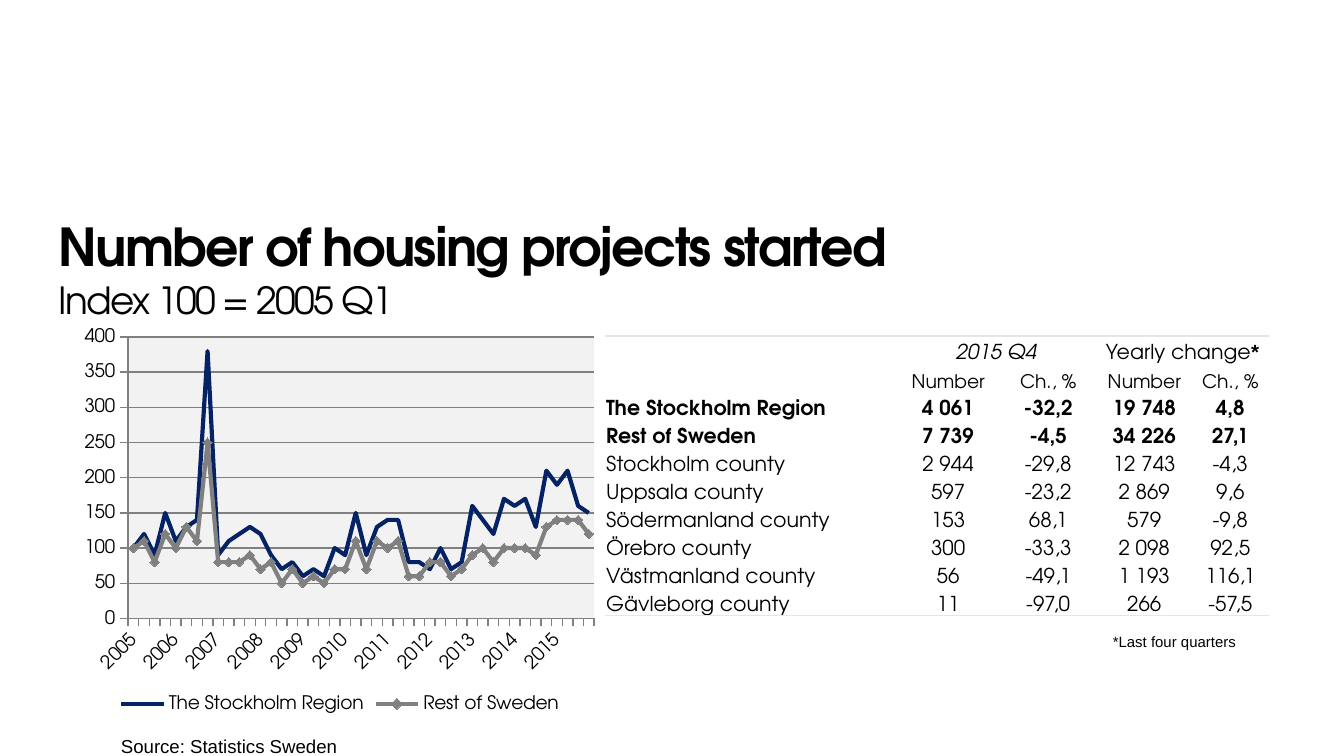
from dataclasses import dataclass

from lxml.etree import SubElement
from pptx import Presentation
from pptx.chart.data import CategoryChartData
from pptx.dml.color import RGBColor
from pptx.enum.chart import XL_CHART_TYPE as ChartType
from pptx.enum.chart import XL_LEGEND_POSITION as LegendPosition
from pptx.enum.chart import XL_MARKER_STYLE as MarkerStyle
from pptx.enum.chart import XL_TICK_MARK as TickMark
from pptx.enum.text import MSO_ANCHOR as Anchor
from pptx.enum.text import MSO_AUTO_SIZE as AutoSize
from pptx.enum.text import PP_ALIGN as Align
from pptx.oxml import parse_xml
from pptx.oxml.ns import nsdecls, qn
from pptx.util import Inches, Pt

COLORS = {"text": "000000", "rule": "E6E6E6", "plot": "F2F2F2",
          "stockholm": "052364", "rest": "808080", "grid": "808080"}
HEADING_FONT, NOTE_FONT = "TeX Gyre Adventor", "Arial"
PLAIN_TABLE_STYLE = "{2D5ABB26-0587-4C30-8999-92F81FD0307C}"
COLUMNS, ROWS = 100, 56.25
NO_MARGINS = dict.fromkeys(
    ("margin_left", "margin_top", "margin_right", "margin_bottom"), 0)


def grid(units: float) -> int:
    """Length of a number of grid units, a hundredth of the slide's width each."""
    return Inches(units * 10 / COLUMNS)


@dataclass(frozen=True)
class Box:
    left: float
    top: float
    width: float
    height: float

    def lengths(self) -> list[int]:
        return [grid(v) for v in (self.left, self.top, self.width, self.height)]


@dataclass(frozen=True)
class Note:
    text: str
    box: Box
    size: float


@dataclass(frozen=True)
class IndexLine:
    name: str
    color: str
    marker: MarkerStyle
    values: tuple[int, ...]


NOTES = (
    Note("Source: Statistics Sweden", Box(9, 53, 17, 4.2), 10),
    Note("*Last four quarters", Box(82.8, 45.1, 10, 9.2), 8),
)
QUARTERS = [str(year) if quarter == 0 else ""
            for year in range(2005, 2016) for quarter in range(4)]
INDEX_LINES = (
    IndexLine("The Stockholm Region", "stockholm", MarkerStyle.NONE, (
        100, 120, 90, 150, 110, 130, 140, 380, 90, 110, 120, 130, 120, 90, 70,
        80, 60, 70, 60, 100, 90, 150, 90, 130, 140, 140, 80, 80, 70, 100, 70,
        80, 160, 140, 120, 170, 160, 170, 130, 210, 190, 210, 160, 150)),
    IndexLine("Rest of Sweden", "rest", MarkerStyle.DIAMOND, (
        100, 110, 80, 120, 100, 130, 110, 250, 80, 80, 80, 90, 70, 80, 50, 70,
        50, 60, 50, 70, 70, 110, 70, 110, 100, 110, 60, 60, 80, 80, 60, 70, 90,
        100, 80, 100, 100, 100, 90, 130, 140, 140, 140, 120)),
)
COLUMN_WIDTHS = (21.7, 7.7, 7.2, 7.1, 5.7)
HOUSING = (
    ("", "2015 Q4", "", "Yearly change", ""),
    ("", "Number", "Ch., %", "Number", "Ch., %"),
    ("The Stockholm Region", "4 061", "-32,2", "19 748", "4,8"),
    ("Rest of Sweden", "7 739", "-4,5", "34 226", "27,1"),
    ("Stockholm county", "2 944", "-29,8", "12 743", "-4,3"),
    ("Uppsala county", "597", "-23,2", "2 869", "9,6"),
    ("Södermanland county", "153", "68,1", "579", "-9,8"),
    ("Örebro county", "300", "-33,3", "2 098", "92,5"),
    ("Västmanland county", "56", "-49,1", "1 193", "116,1"),
    ("Gävleborg county", "11", "-97,0", "266", "-57,5"),
)


def set_values(target, values: dict) -> None:
    for name, value in values.items():
        setattr(target, name, value)


def style_font(font, size: float, name: str = HEADING_FONT, **values) -> None:
    set_values(font, {"name": name, "size": Pt(size), "bold": False} | values)
    font.color.rgb = RGBColor.from_string(COLORS["text"])


def style_line(line, color: str, width: float) -> None:
    line.color.rgb = RGBColor.from_string(COLORS[color])
    line.width = Pt(width)


def write_title(title) -> None:
    set_values(title, dict(zip(("left", "top", "width", "height"),
                               Box(4.35, 15.95, 62.1, 8).lengths())))
    frame = title.text_frame
    set_values(frame, NO_MARGINS | {"vertical_anchor": Anchor.TOP,
                                    "auto_size": AutoSize.NONE, "word_wrap": True})
    paragraph = frame.paragraphs[0]
    paragraph.alignment = Align.LEFT
    for text, size, bold in (("Number of housing projects started", 28, True),
                             ("Index 100 = 2005 Q1", 20, False)):
        if paragraph.runs:
            paragraph.add_line_break()
        run = paragraph.add_run()
        run.text = text
        style_font(run.font, size, bold=bold)
        run.font._element.set("spc", "-90")


def add_note(slide, note: Note) -> None:
    frame = slide.shapes.add_textbox(*note.box.lengths()).text_frame
    set_values(frame, NO_MARGINS | {"word_wrap": False})
    paragraph = frame.paragraphs[0]
    paragraph.line_spacing = Pt(24)
    run = paragraph.add_run()
    run.text = note.text
    style_font(run.font, note.size, NOTE_FONT)


def add_rule(cell, side: str) -> None:
    """Draw a thin border; side is lnT or lnB."""
    border = parse_xml(
        f'<a:{side} {nsdecls("a")} w="12700"><a:solidFill>'
        f'<a:srgbClr val="{COLORS["rule"]}"/></a:solidFill></a:{side}>')
    cell._tc.get_or_add_tcPr().insert(0, border)


def add_housing_table(slide) -> None:
    box = Box(45, 25, sum(COLUMN_WIDTHS), 20.8)
    table = slide.shapes.add_table(
        len(HOUSING), len(COLUMN_WIDTHS), *box.lengths()).table
    set_values(table, {"first_row": False, "horz_banding": False})
    table._tbl.tblPr.find(qn("a:tableStyleId")).text = PLAIN_TABLE_STYLE
    for column, width in zip(table.columns, COLUMN_WIDTHS):
        column.width = grid(width)
    for first in (1, 3):
        table.cell(0, first).merge(table.cell(0, first + 1))
    for r, entries in enumerate(HOUSING):
        table.rows[r].height = grid(box.height / len(HOUSING))
        size = 10 if r == 1 else 11
        for c, text in enumerate(entries):
            cell = table.cell(r, c)
            set_values(cell, dict.fromkeys(NO_MARGINS, grid(0.1))
                       | {"margin_bottom": 0, "vertical_anchor": Anchor.BOTTOM})
            cell.fill.background()
            paragraph = cell.text_frame.paragraphs[0]
            paragraph.alignment = Align.CENTER if c else Align.LEFT
            if text:
                run = paragraph.add_run()
                run.text = text
                style_font(run.font, size, bold=r in (2, 3), italic=(r, c) == (0, 1))
            else:
                SubElement(paragraph._p, qn("a:endParaRPr"), sz=str(size * 100))
            if r == 0:
                add_rule(cell, "lnT")
            elif r == len(HOUSING) - 1:
                add_rule(cell, "lnB")
    asterisk = table.cell(0, 3).text_frame.paragraphs[0].add_run()
    asterisk.text = "*"
    style_font(asterisk.font, 11, NOTE_FONT, bold=True)


def format_plot_area(chart) -> None:
    """Place the inner plot area and fill its background."""
    area = chart._chartSpace.chart.plotArea
    for layout in area.findall(qn("c:layout")):
        area.remove(layout)
    shares = "".join(f'<c:{key} val="{value}"/>' for key, value in
                     {"x": 0.1, "y": 0.04, "w": 0.88, "h": 0.71}.items())
    area.insert(0, parse_xml(
        f'<c:layout {nsdecls("c")}><c:manualLayout><c:layoutTarget val="inner"/>'
        f'<c:xMode val="edge"/><c:yMode val="edge"/>{shares}'
        '</c:manualLayout></c:layout>'))
    area.append(parse_xml(
        f'<c:spPr {nsdecls("c", "a")}><a:solidFill>'
        f'<a:srgbClr val="{COLORS["plot"]}"/></a:solidFill></c:spPr>'))


def add_index_chart(slide) -> None:
    data = CategoryChartData(number_format="0")
    data.categories = QUARTERS
    for line in INDEX_LINES:
        data.add_series(line.name, line.values)
    chart = slide.shapes.add_chart(
        ChartType.LINE_MARKERS, *Box(5.6, 23.9, 39.4, 29.5).lengths(), data).chart
    set_values(chart, {"has_title": False, "has_legend": True})
    style_font(chart.font, 10)
    set_values(chart.legend, {"position": LegendPosition.BOTTOM,
                              "include_in_layout": False})
    chart.plots[0].vary_by_categories = False
    for series, line in zip(chart.plots[0].series, INDEX_LINES):
        series.smooth = False
        style_line(series.format.line, line.color, 2.25)
        set_values(series.marker, {"style": line.marker, "size": 5})
        if line.marker != MarkerStyle.NONE:
            series.marker.format.fill.solid()
            series.marker.format.fill.fore_color.rgb = RGBColor.from_string(
                COLORS[line.color])
            style_line(series.marker.format.line, line.color, 0.75)
    years, index = chart.category_axis, chart.value_axis
    set_values(index, {"minimum_scale": 0, "maximum_scale": 400, "major_unit": 50,
                       "has_major_gridlines": True})
    style_line(index.major_gridlines.format.line, "grid", 0.75)
    for axis in (years, index):
        axis.major_tick_mark = TickMark.OUTSIDE
        style_line(axis.format.line, "grid", 0.75)
        style_font(axis.tick_labels.font, 10)
    years._element.find(qn("c:txPr")).find(qn("a:bodyPr")).set("rot", "-2700000")
    no_levels = years._element.find(qn("c:noMultiLvlLbl"))
    for tag, step in (("tickLblSkip", 4), ("tickMarkSkip", 1)):
        no_levels.addprevious(parse_xml(f'<c:{tag} {nsdecls("c")} val="{step}"/>'))
    format_plot_area(chart)


def main() -> None:
    deck = Presentation()
    set_values(deck, {"slide_width": grid(COLUMNS), "slide_height": grid(ROWS)})
    slide = deck.slides.add_slide(deck.slide_layouts[5])
    write_title(slide.shapes.title)
    add_housing_table(slide)
    for note in NOTES:
        add_note(slide, note)
    add_index_chart(slide)
    deck.save("out.pptx")


if __name__ == "__main__":
    main()
